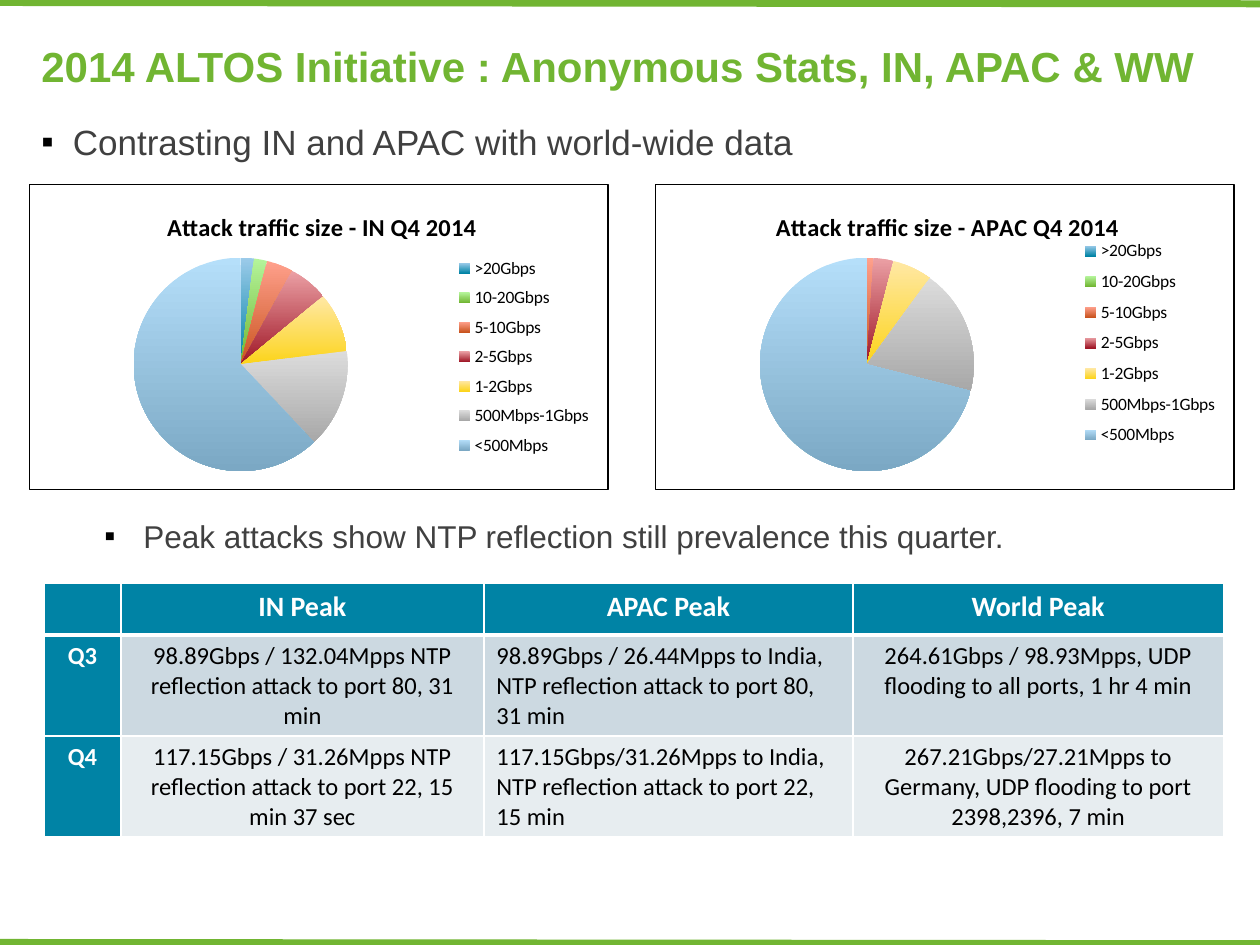
"""Build the attack statistics slide with two pie charts and a peak table."""
from lxml.etree import SubElement
from pptx import Presentation
from pptx.chart.data import CategoryChartData
from pptx.dml.color import RGBColor
from pptx.enum.chart import XL_CHART_TYPE, XL_LEGEND_POSITION
from pptx.enum.shapes import MSO_CONNECTOR
from pptx.enum.text import MSO_ANCHOR, PP_ALIGN
from pptx.oxml import parse_xml
from pptx.oxml.ns import nsdecls, qn
from pptx.util import Inches, Pt

THEME = {
    "green": "71B532", "teal": "0083A5", "grey": "404040", "black": "000000", "white": "FFFFFF",
    "bands": ["CCD9E1", "E7EDF0"], "sans": "Arial", "body": "Calibri",
    "title": 24, "lead": 20, "point": 18, "header": 16, "cell": 14, "chart": 10, "chart_title": 14,
    "slices": [("9CCBEA", "0083A5"), ("B4F49A", "71B532"), ("FFA08C", "C9541F"), ("EBA0A5", "9F1726"),
               ("FFE8A5", "FCD41B"), ("DCDCDC", "A8A8A8"), ("B5DFFA", "7BA8C4")],
}
TITLE = "2014 ALTOS Initiative : Anonymous Stats, IN, APAC & WW"
BULLETS = [
    {"text": "Contrasting IN and APAC with world-wide data", "top": 0.91, "size": "lead",
     "indent": 0.25, "hanging": 0.26},
    {"text": "Peak attacks show NTP reflection still prevalence this quarter.", "top": 4.05,
     "size": "point", "indent": 0.81, "hanging": 0.31},
]
SIZES = [">20Gbps", "10-20Gbps", "5-10Gbps", "2-5Gbps", "1-2Gbps", "500Mbps-1Gbps", "<500Mbps"]
CHARTS = [
    {"title": "Attack traffic size - IN Q4 2014", "values": [2, 2, 4, 6, 9, 15, 62],
     "left": 0.23, "title_at": (0.23, 0.07), "legend_at": (0.73, 0.21, 0.25, 0.71)},
    {"title": "Attack traffic size - APAC Q4 2014", "values": [0, 0, 1, 3, 6, 19, 71],
     "left": 5.2, "title_at": (0.2, 0.07), "legend_at": (0.73, 0.15, 0.25, 0.74)},
]
PIE_AT = (0.18, 0.24, 0.37, 0.7)
PEAKS = [
    ["", "IN Peak", "APAC Peak", "World Peak"],
    ["Q3", "98.89Gbps / 132.04Mpps NTP reflection attack to port 80, 31 min",
     "98.89Gbps / 26.44Mpps to India, NTP reflection attack to port 80, 31 min",
     "264.61Gbps / 98.93Mpps, UDP flooding to all ports, 1 hr 4 min"],
    ["Q4", "117.15Gbps / 31.26Mpps NTP reflection attack to port 22, 15 min 37 sec",
     "117.15Gbps/31.26Mpps to India, NTP reflection attack to port 22, 15 min",
     "267.21Gbps/27.21Mpps to Germany, UDP flooding to port 2398,2396, 7 min"],
]
COLUMNS = [0.61, 2.88, 2.93, 2.94]
ROWS = [0.41, 0.8, 0.8]


def color(name):
    return RGBColor.from_string(THEME.get(name, name))


def set_font(font, size, name, ink, bold=False):
    font.color.rgb = color(ink)
    formats = {"size": Pt(THEME[size]), "name": THEME[name], "bold": bold}
    for key, value in formats.items():
        setattr(font, key, value)


def add_rule(page, top):
    rule = page.shapes.add_connector(
        MSO_CONNECTOR.STRAIGHT, Inches(0), Inches(top), Inches(10.02), Inches(top + 0.01))
    rule.line.color.rgb = color("green")
    rule.line.width = Pt(4)
    SubElement(rule._element.spPr, qn("a:effectLst"))


def add_text(page, text, at, size, ink, bold=False, anchor=MSO_ANCHOR.TOP):
    box = page.shapes.add_textbox(*map(Inches, at))
    frame = box.text_frame
    for key, value in {"word_wrap": True, "vertical_anchor": anchor}.items():
        setattr(frame, key, value)
    para = frame.paragraphs[0]
    span = para.add_run()
    span.text = text
    set_font(span.font, size, "sans", ink, bold)
    return para


def add_bullet(page, bullet):
    para = add_text(page, bullet["text"], (0.23, bullet["top"], 9.67, 0.42), bullet["size"], "grey")
    properties = para._p.get_or_add_pPr()
    properties.set("marL", str(Inches(bullet["indent"])))
    properties.set("indent", str(-Inches(bullet["hanging"])))
    ink = SubElement(properties, qn("a:buClr"))
    SubElement(ink, qn("a:srgbClr"), val=THEME["black"])
    SubElement(properties, qn("a:buFont"), typeface=THEME["sans"])
    SubElement(properties, qn("a:buChar"), char="▪")


def place(part, at, inner=False):
    for old in part.findall(qn("c:layout")):
        part.remove(old)
    layout = parse_xml(f"<c:layout {nsdecls('c')}><c:manualLayout/></c:layout>")
    manual = layout[0]
    if inner:
        SubElement(manual, qn("c:layoutTarget"), val="inner")
    for mode in ("xMode", "yMode"):
        SubElement(manual, qn(f"c:{mode}"), val="edge")
    for key, value in zip("xywh", at):
        SubElement(manual, qn(f"c:{key}"), val=str(value))
    before = part.find(qn("c:tx"))
    if before is None:
        before = part.find(qn("c:legendPos"))
    if before is None:
        part.insert(0, layout)
    else:
        before.addnext(layout)


def add_pie(page, item):
    data = CategoryChartData()
    data.categories = SIZES
    data.add_series("Series 1", item["values"])
    at = (item["left"], 1.46, 4.6, 2.43)
    chart = page.shapes.add_chart(XL_CHART_TYPE.PIE, *map(Inches, at), data).chart
    set_font(chart.font, "chart", "body", "black")
    chart.has_title = True
    frame = chart.chart_title.text_frame
    frame.text = item["title"]
    set_font(frame.paragraphs[0].runs[0].font, "chart_title", "body", "black", True)
    chart.has_legend = True
    for key, value in {"position": XL_LEGEND_POSITION.RIGHT, "include_in_layout": False}.items():
        setattr(chart.legend, key, value)
    set_font(chart.legend.font, "chart", "body", "black")
    plot = chart.plots[0]
    plot.vary_by_categories = True
    for index, shades in enumerate(THEME["slices"]):
        fill = plot.series[0].points[index].format.fill
        fill.gradient()
        fill.gradient_angle = 270
        for stop, shade in zip(fill.gradient_stops, shades):
            stop.color.rgb = color(shade)
    body = chart.element.find(qn("c:chart"))
    place(body.find(qn("c:title")), item["title_at"])
    place(body.find(qn("c:legend")), item["legend_at"])
    place(body.find(qn("c:plotArea")), PIE_AT, inner=True)
    body.addnext(parse_xml(
        f'<c:spPr {nsdecls("c", "a")}><a:noFill/><a:ln w="{Pt(0.75)}"><a:solidFill>'
        f'<a:srgbClr val="{THEME["black"]}"/></a:solidFill></a:ln></c:spPr>'))


def add_borders(cell, header):
    properties = cell._tc.get_or_add_tcPr()
    for position, side in enumerate(("lnL", "lnR", "lnT", "lnB")):
        width = Pt(3 if header and side == "lnB" else 1)
        properties.insert(position, parse_xml(
            f'<a:{side} {nsdecls("a")} w="{width}"><a:solidFill>'
            f'<a:srgbClr val="{THEME["white"]}"/></a:solidFill></a:{side}>'))


def add_peaks(page):
    at = (0.35, 4.63, sum(COLUMNS), sum(ROWS))
    table = page.shapes.add_table(len(ROWS), len(COLUMNS), *map(Inches, at)).table
    for column, width in zip(table.columns, COLUMNS):
        column.width = Inches(width)
    for row, height in zip(table.rows, ROWS):
        row.height = Inches(height)
    for line, texts in enumerate(PEAKS):
        for place_in_row, text in enumerate(texts):
            cell = table.cell(line, place_in_row)
            heading = line == 0 or place_in_row == 0
            cell.fill.solid()
            cell.fill.fore_color.rgb = color("teal" if heading else THEME["bands"][line - 1])
            add_borders(cell, line == 0)
            cell.text = text
            para = cell.text_frame.paragraphs[0]
            para.alignment = PP_ALIGN.LEFT if line and place_in_row == 2 else PP_ALIGN.CENTER
            set_font(para.font, "cell" if line else "header", "body",
                     "white" if heading else "black", heading)
            for span in para.runs:
                set_font(span.font, "cell" if line else "header", "body",
                         "white" if heading else "black", heading)


def main():
    deck = Presentation()
    deck.slide_width, deck.slide_height = Inches(10), Inches(7.5)
    page = deck.slides.add_slide(deck.slide_layouts[6])
    for top in (7.48, 0.02):
        add_rule(page, top)
    add_text(page, TITLE, (0.23, 0.15, 9.64, 0.75), "title", "green", True, MSO_ANCHOR.MIDDLE)
    for bullet in BULLETS:
        add_bullet(page, bullet)
    add_peaks(page)
    for item in CHARTS:
        add_pie(page, item)
    deck.save("out.pptx")


if __name__ == "__main__":
    main()
